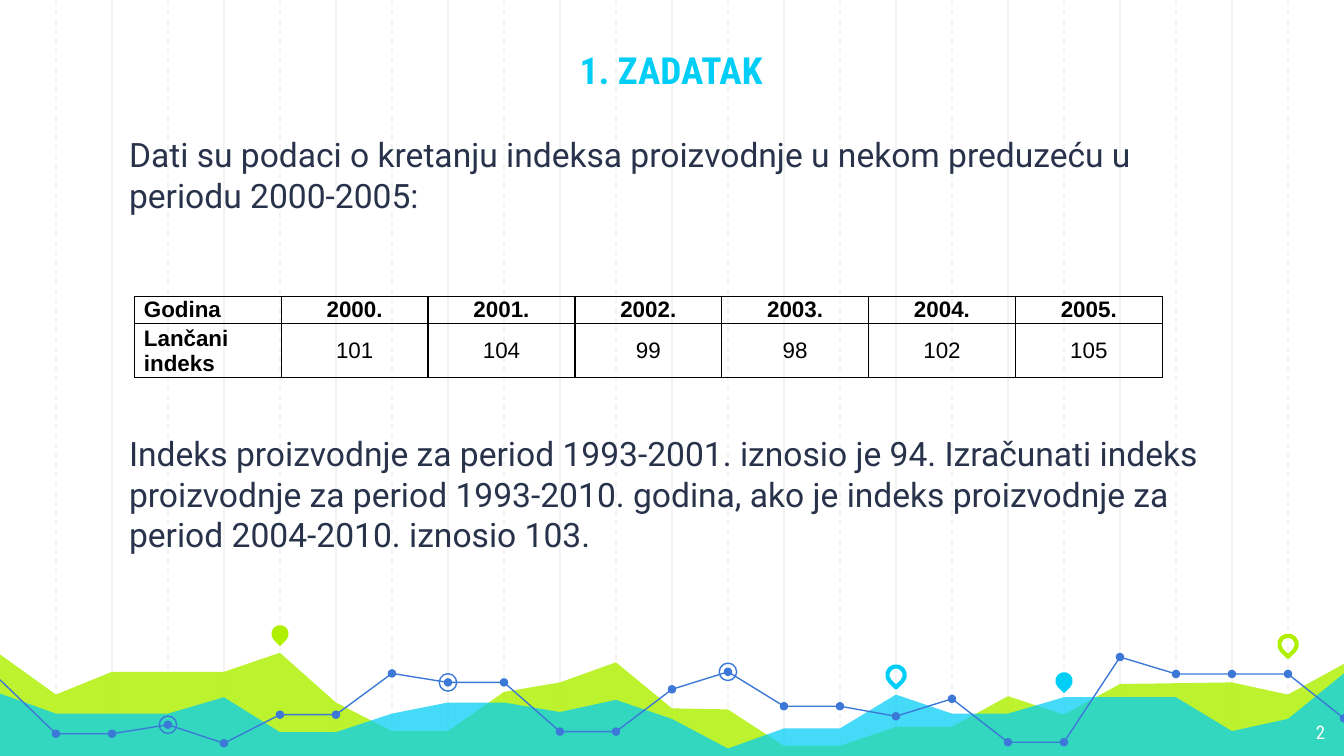
from lxml.etree import SubElement
from pptx import Presentation
from pptx.dml.color import RGBColor
from pptx.enum.dml import MSO_LINE
from pptx.enum.shapes import MSO_CONNECTOR, MSO_SHAPE
from pptx.enum.text import MSO_ANCHOR, PP_ALIGN
from pptx.oxml.ns import qn
from pptx.util import Cm, Pt

WHITE = RGBColor(0xFF, 0xFF, 0xFF)
BLACK = RGBColor(0, 0, 0)
GRID = RGBColor(0xF3, 0xF3, 0xF3)
LIME = RGBColor(0xAF, 0xF0, 0x00)
CYAN = RGBColor(0x00, 0xCE, 0xF6)
BLUE = RGBColor(0x3C, 0x78, 0xD8)
NAVY = RGBColor(0x28, 0x32, 0x4A)

TITLE = "1. ZADATAK"
INTRO = "Dati su podaci o kretanju indeksa proizvodnje u nekom preduzeću u periodu 2000-2005:"
TASK = ("Indeks proizvodnje za period 1993-2001. iznosio je 94. Izračunati indeks proizvodnje "
        "za period 1993-2010. godina, ako je indeks proizvodnje za period 2004-2010. iznosio 103.")
PAGE = "2"
ROWS = [
    ("Godina", "2000.", "2001.", "2002.", "2003.", "2004.", "2005."),
    ("Lančani indeks", "101", "104", "99", "98", "102", "105"),
]

# Decoration: heights in cm by grid column; None means no point on that column
LIME_AREA = [12.37, 13.13, 12.7, None, 12.7, 12.34, 13.28, 13.82, 13.82, 13.08, 12.9, 12.52,
             13.39, 13.41, 14.1, 14.1, 13.74, 13.74, 13.16, 13.51, 12.93, None, 12.9, 13.13, 12.55]
CYAN_AREA = [13.11, 13.49, None, 13.49, 13.18, 13.84, 13.84, 13.49, 13.28, 13.28, 13.46, 13.23,
             13.59, 14.15, 13.77, 13.77, 13.13, 13.49, 13.49, 13.18, None, 13.18, 13.82, 13.59, 12.73]
TREND = [12.85, 13.87, 13.87, 13.7, 14.05, 13.51, 13.51, 12.73, 12.9, 12.9, 13.83, 13.83,
         13.03, 12.7, 13.35, 13.35, 13.54, 13.21, 14.03, 14.03, 12.42, 12.74, 12.74, 12.74, 13.58]
TREND_PARTS = [(0, 11), (11, 20), (20, 24)]
RINGS = [3, 8, 13]
PINS = [(5, 11.98, LIME, True), (16, 12.76, CYAN, False),
        (19, 12.87, CYAN, True), (23, 12.18, LIME, False)]  # column, y, colour, filled

WIDTH, HEIGHT, COLUMNS = 25.4, 14.29, 24
STEP = WIDTH / COLUMNS
DOT, MARK = 0.16, 0.33
TABLE_LEFT, TABLE_TOP, TABLE_WIDTH = 2.54, 5.61, 19.43
ROW_HEIGHTS = [0.51, 1.02]

prs = Presentation()
prs.slide_width, prs.slide_height = Cm(WIDTH), Cm(HEIGHT)
s = prs.slides.add_slide(prs.slide_layouts[6])


def paint(shape, fill=None, line=None, width=0.75):
    shape.shadow.inherit = False
    if fill is None:
        shape.fill.background()
    else:
        shape.fill.solid()
        shape.fill.fore_color.rgb = fill
    if line is None:
        shape.line.fill.background()
    else:
        shape.line.color.rgb = line
        shape.line.width = Pt(width)


def add_path(points, close):
    corners = [(Cm(x), Cm(y)) for x, y in points]
    builder = s.shapes.build_freeform(*corners[0])
    builder.add_line_segments(corners[1:], close=close)
    return builder.convert_to_shape()


def add_area(heights, color, opacity):
    points = [(i * STEP, y) for i, y in enumerate(heights) if y is not None]
    area = add_path(points + [(WIDTH, HEIGHT), (0, HEIGHT)], True)
    paint(area, color)
    clr = area.fill._xPr.find(".//" + qn("a:srgbClr"))
    SubElement(clr, qn("a:alpha")).set("val", str(opacity * 1000))


def add_marker(kind, column, y, size):
    """Place a marker centred on a grid column."""
    return s.shapes.add_shape(kind, Cm(column * STEP - size / 2), Cm(y - size / 2),
                              Cm(size), Cm(size))


def add_run(p, text, font, size, color, bold=False):
    r = p.add_run()
    r.text = text
    r.font.name, r.font.size, r.font.bold = font, Pt(size), bold
    r.font.color.rgb = color


def add_text(box, text, font, size, color, align=PP_ALIGN.LEFT, anchor=MSO_ANCHOR.TOP,
             bold=False, left_inset=0.25):
    tf = s.shapes.add_textbox(*[Cm(v) for v in box]).text_frame
    tf.word_wrap = True
    tf.vertical_anchor = anchor
    tf.margin_left = Cm(left_inset)
    tf.margin_top = tf.margin_right = tf.margin_bottom = Cm(0.25)
    p = tf.paragraphs[0]
    p.alignment = align
    add_run(p, text, font, size, color, bold)


def add_borders(cell):
    tc_pr = cell._tc.get_or_add_tcPr()
    for i, side in enumerate(("a:lnL", "a:lnR", "a:lnT", "a:lnB")):
        ln = tc_pr.makeelement(qn(side), {"w": str(Pt(0.75))})
        SubElement(SubElement(ln, qn("a:solidFill")), qn("a:srgbClr")).set("val", str(BLACK))
        tc_pr.insert(i, ln)


# Vertical grid: solid on even columns, dashed on odd ones
for i in range(1, COLUMNS):
    rule = s.shapes.add_connector(MSO_CONNECTOR.STRAIGHT, Cm(i * STEP), 0, Cm(i * STEP), Cm(HEIGHT))
    rule.line.color.rgb = GRID
    rule.line.width = Pt(0.75)
    if i % 2:
        rule.line.dash_style = MSO_LINE.DASH
    SubElement(rule._element.spPr, qn("a:effectLst"))

add_area(LIME_AREA, LIME, 82)
add_area(CYAN_AREA, CYAN, 73)

for column, y, color, filled in PINS:
    pin = add_marker(MSO_SHAPE.TEAR, column, y, MARK)
    pin.rotation = 135
    if filled:
        paint(pin, color)
    else:
        paint(pin, line=color, width=2.25)

for first, last in TREND_PARTS:
    points = [(i * STEP, TREND[i]) for i in range(first, last + 1)]
    paint(add_path(points, False), line=BLUE)
for i in range(1, COLUMNS + 1):
    paint(add_marker(MSO_SHAPE.OVAL, i, TREND[i], DOT), BLUE)
for i in RINGS:
    paint(add_marker(MSO_SHAPE.OVAL, i, TREND[i], MARK), line=BLUE)

add_text((23.77, 13.41, 1.52, 0.88), PAGE, "Roboto Condensed", 10, WHITE, PP_ALIGN.RIGHT)
add_text((2.97, 0, 19.43, 1.98), TITLE, "Roboto Condensed", 20, CYAN,
         PP_ALIGN.CENTER, MSO_ANCHOR.BOTTOM, bold=True)
for top, height, text in [(2.29, 2.03, INTRO), (7.94, 2.79, TASK)]:
    add_text((1.88, top, 21.59, height), text, "Roboto", 18, NAVY, left_inset=0.56)

table = s.shapes.add_table(len(ROWS), len(ROWS[0]), Cm(TABLE_LEFT), Cm(TABLE_TOP),
                           Cm(TABLE_WIDTH), Cm(sum(ROW_HEIGHTS))).table
table.first_row = table.horz_banding = False
for column in table.columns:
    column.width = Cm(TABLE_WIDTH / len(ROWS[0]))
for i, values in enumerate(ROWS):
    table.rows[i].height = Cm(ROW_HEIGHTS[i])
    for j, value in enumerate(values):
        cell = table.cell(i, j)
        cell.fill.background()
        cell.margin_left = cell.margin_right = Cm(0.18)
        cell.margin_top = cell.margin_bottom = 0
        cell.vertical_anchor = MSO_ANCHOR.MIDDLE if i else MSO_ANCHOR.TOP
        p = cell.text_frame.paragraphs[0]
        p.alignment = PP_ALIGN.CENTER if j else PP_ALIGN.LEFT
        add_run(p, value, "Arial", 12, BLACK, bold=i == 0 or j == 0)
        add_borders(cell)

prs.save("out.pptx")
